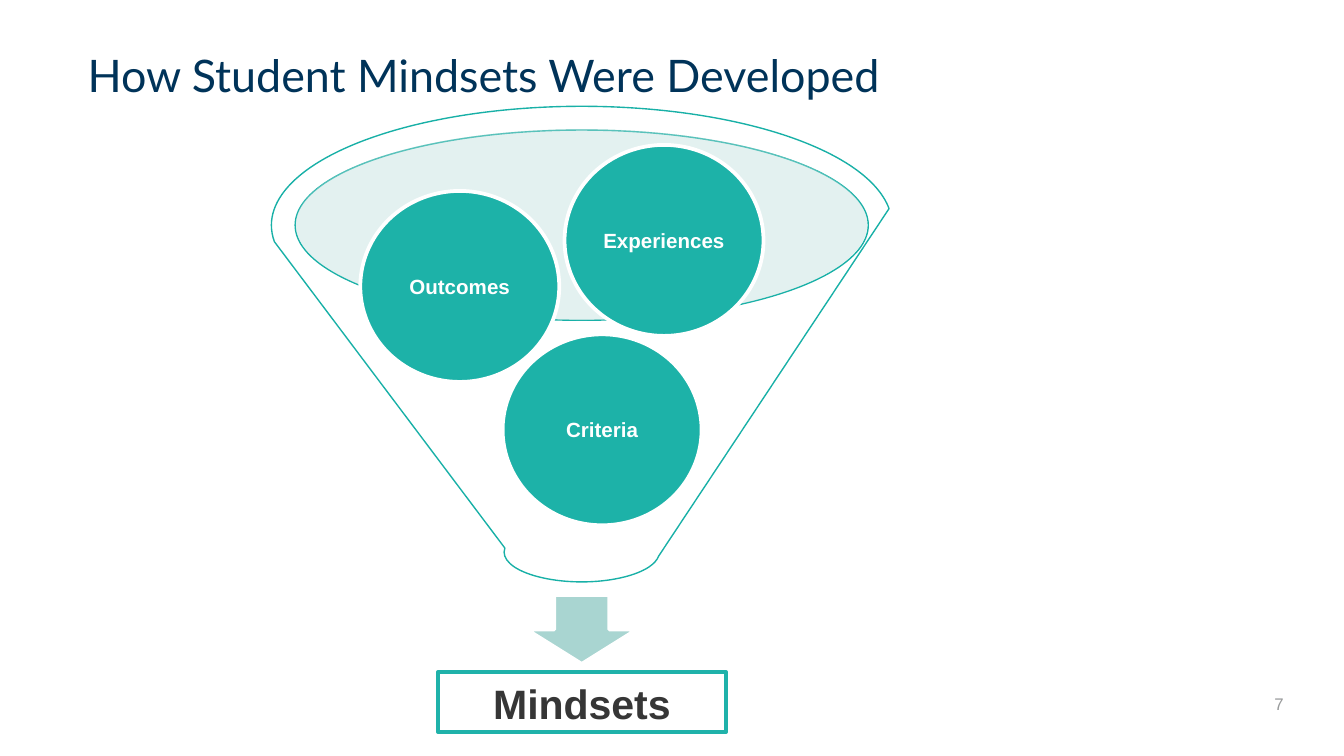
from dataclasses import dataclass

from lxml.etree import SubElement
from pptx import Presentation
from pptx.dml.color import RGBColor
from pptx.enum.shapes import MSO_SHAPE
from pptx.enum.text import MSO_ANCHOR, MSO_AUTO_SIZE, PP_ALIGN
from pptx.oxml.ns import qn
from pptx.util import Cm, Pt


@dataclass(frozen=True)
class Theme:
    heading_font: str = "Lato"
    body_font: str = "Arial"
    navy: str = "003359"
    teal: str = "1DB2A8"
    funnel_line: str = "18B0A7"
    box_line: str = "20B2AA"
    mouth: str = "BBDDDA"
    arrow: str = "A9D5D1"
    white: str = "FFFFFF"
    dark: str = "363636"
    grey: str = "999B9C"
    title_size: float = 24
    result_size: float = 22
    label_size: float = 11
    number_size: float = 9


THEME = Theme()


def set_text(s, text, size, color, font=THEME.body_font, bold=False,
             align=PP_ALIGN.CENTER, anchor=MSO_ANCHOR.MIDDLE):
    tf = s.text_frame
    tf.text = text
    tf.word_wrap = True
    tf.auto_size = MSO_AUTO_SIZE.NONE
    tf.vertical_anchor = anchor
    p = tf.paragraphs[0]
    p.alignment = align
    r = p.runs[0]
    r.font.name, r.font.size, r.font.bold = font, Pt(size), bold
    r.font.color.rgb = RGBColor.from_string(color)
    return tf


def add_preset(shapes, kind, box, fill, line=None, width=2, opacity=None):
    s = shapes.add_shape(kind, *(Cm(v) for v in box))
    s.shadow.inherit = False
    s.fill.solid()
    s.fill.fore_color.rgb = RGBColor.from_string(fill)
    if opacity is not None:
        color = s._element.spPr.find(qn("a:solidFill")).find(qn("a:srgbClr"))
        SubElement(color, qn("a:alpha")).set("val", str(opacity * 1000))
    if line:
        s.line.color.rgb = RGBColor.from_string(line)
        s.line.width = Pt(width)
    else:
        s.line.fill.background()
    return s


def add_title(slide, box):
    s = slide.shapes.title
    s.left, s.top, s.width, s.height = (Cm(v) for v in box)
    tf = set_text(s, "How Student Mindsets Were Developed", THEME.title_size,
                  THEME.navy, THEME.heading_font, align=PP_ALIGN.LEFT,
                  anchor=MSO_ANCHOR.BOTTOM)
    tf.paragraphs[0].line_spacing = 0.9


def add_funnel(slide, box):
    left, top, width, height = box
    shapes = slide.shapes.add_group_shape().shapes

    # Funnel and its tinted mouth
    add_preset(shapes, MSO_SHAPE.FUNNEL, box, THEME.white,
               THEME.funnel_line, 0.75, opacity=40)
    add_preset(shapes, MSO_SHAPE.OVAL,
               (left + 0.46, top + 0.43, width - 0.93, 3.61),
               THEME.mouth, opacity=40)

    # Arrow below the spout
    arrow_width = 2.08
    add_preset(shapes, MSO_SHAPE.DOWN_ARROW,
               (left + (width - arrow_width) / 2, top + height + 0.25,
                arrow_width, 1.3), THEME.arrow, THEME.white)

    # Ingredients
    for label, dx, dy in (("Criteria", 4.37, 4.31),
                          ("Outcomes", 1.68, 1.6),
                          ("Experiences", 5.54, 0.73)):
        s = add_preset(shapes, MSO_SHAPE.OVAL,
                       (left + dx, top + dy, 3.76, 3.61),
                       THEME.teal, THEME.white)
        tf = set_text(s, label, THEME.label_size, THEME.white, bold=True)
        tf.margin_left = tf.margin_right = Cm(0.05)
        tf.margin_top = tf.margin_bottom = Cm(0.05)


def add_result(slide, box):
    s = add_preset(slide.shapes, MSO_SHAPE.RECTANGLE, box,
                   THEME.white, THEME.box_line)
    set_text(s, "Mindsets", THEME.result_size, THEME.dark, bold=True,
             anchor=MSO_ANCHOR.TOP)


def add_slide_number(slide, box):
    s = slide.shapes.add_textbox(*(Cm(v) for v in box))
    set_text(s, "7", THEME.number_size, THEME.grey, align=PP_ALIGN.RIGHT)


def main():
    prs = Presentation()
    prs.slide_width, prs.slide_height = Cm(25.4), Cm(14.29)
    slide = prs.slides.add_slide(prs.slide_layouts[5])
    add_slide_number(slide, (18.8, 12.93, 5.71, 0.76))
    add_title(slide, (1.4, -0.03, 16.18, 2.08))
    add_funnel(slide, (5.13, 2.01, 11.73, 8.99))
    add_result(slide, (8.28, 12.7, 5.44, 1.14))
    prs.save("out.pptx")


if __name__ == "__main__":
    main()
